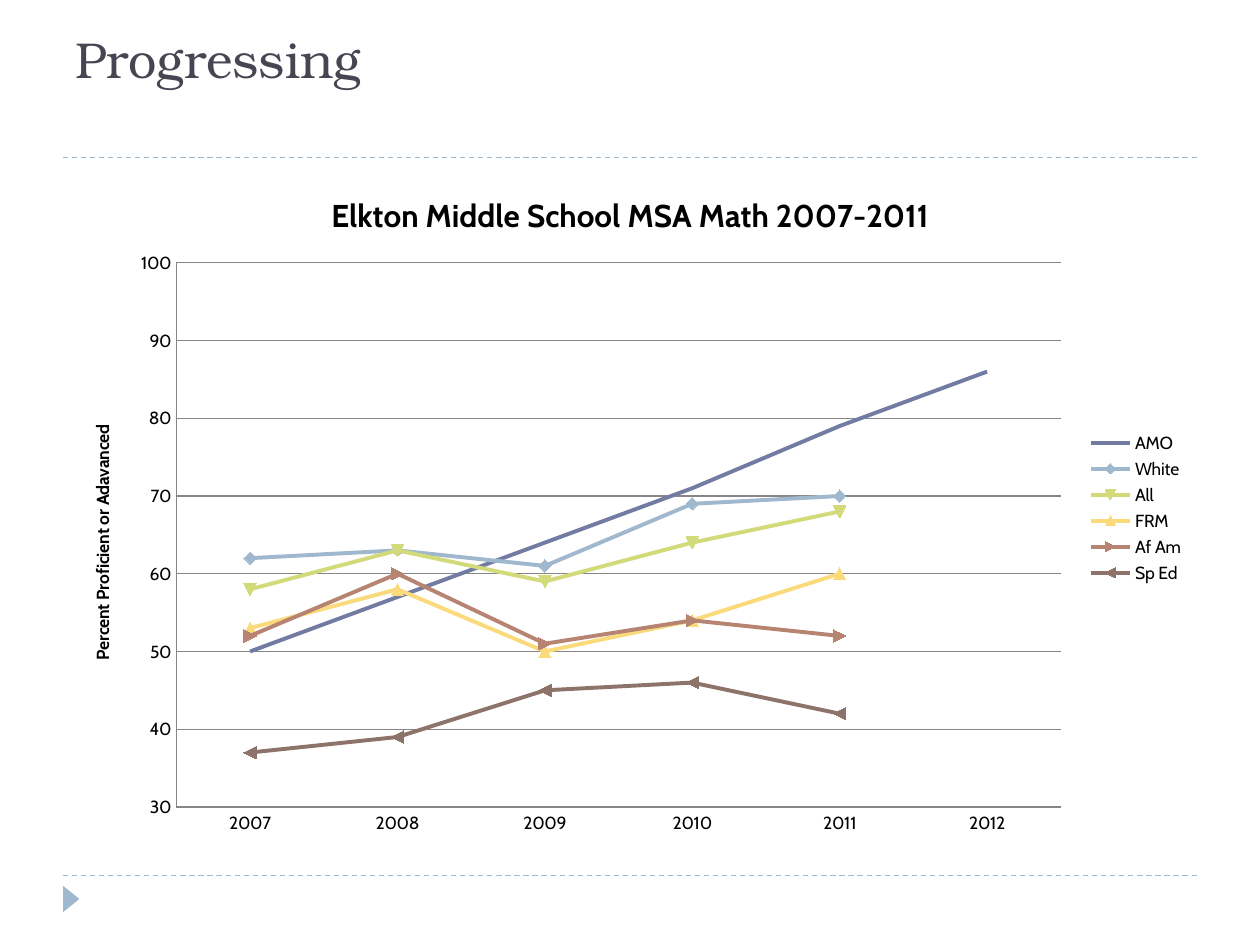
from lxml import etree
from pptx import Presentation, util as u
from pptx.chart import data as chart_data
from pptx.dml.color import RGBColor
from pptx.enum import chart as ch, dml, shapes, text
from pptx.oxml import parse_xml
from pptx.oxml.ns import nsdecls, qn

INK = RGBColor(0x46, 0x46, 0x53)
BLACK = RGBColor(0, 0, 0)
WHITE = RGBColor(0xFF, 0xFF, 0xFF)
GRID = RGBColor(0x86, 0x86, 0x86)
MIST = RGBColor(0x9F, 0xB8, 0xCD)

TITLE = "Progressing"
CHART_TITLE = "Elkton Middle School MSA Math 2007-2011"
AXIS_TITLE = "Percent Proficient or Adavanced"
YEARS = ["2007", "2008", "2009", "2010", "2011", "2012"]
SERIES = [
    ("AMO", RGBColor(0x72, 0x7C, 0xA3), [50, 57, 64, 71, 79, 86]),
    ("White", MIST, [62, 63, 61, 69, 70, None]),
    ("All", RGBColor(0xD2, 0xDA, 0x7A), [58, 63, 59, 64, 68, None]),
    ("FRM", RGBColor(0xFA, 0xDA, 0x7A), [53, 58, 50, 54, 60, None]),
    ("Af Am", RGBColor(0xB8, 0x84, 0x72), [52, 60, 51, 54, 52, None]),
    ("Sp Ed", RGBColor(0x8E, 0x73, 0x6A), [37, 39, 45, 46, 42, None]),
]
RULES = [1.25, 6.95]
PLOT = {"x": 0.1, "y": 0.14, "w": 0.78, "h": 0.8}


def inches(*values):
    return [u.Inches(value) for value in values]


def apply(target, **values):
    for name, value in values.items():
        setattr(target, name, value)


def add_rule(page, top):
    rule = page.shapes.add_connector(
        shapes.MSO_CONNECTOR.STRAIGHT, *inches(0.5, top, 9.5, top))
    apply(rule.line, width=u.Pt(0.75), dash_style=dml.MSO_LINE.DASH)
    rule.line.color.rgb = MIST
    etree.SubElement(rule._element.spPr, qn("a:effectLst"))


def add_title(page):
    box = page.shapes.title
    box.left, box.top, box.width, box.height = inches(0.5, 0.17, 9, 1.08)
    frame = box.text_frame
    apply(frame, text=TITLE, vertical_anchor=text.MSO_ANCHOR.TOP, word_wrap=True)
    para = frame.paragraphs[0]
    para.alignment = text.PP_ALIGN.LEFT
    apply(para.runs[0].font, name="TeX Gyre Bonum", size=u.Pt(28.8))
    para.runs[0].font.color.rgb = INK


def set_heading(owner, words, size):
    frame = owner.text_frame
    frame.text = words
    font = frame.paragraphs[0].runs[0].font
    apply(font, name="Cabin", size=u.Pt(size), bold=True)
    font.color.rgb = BLACK


def place_plot(chart):
    sides = "".join(f'<c:{side} val="{value}"/>' for side, value in PLOT.items())
    layout = parse_xml(
        f'<c:layout {nsdecls("c")}><c:manualLayout><c:layoutTarget val="inner"/>'
        f'<c:xMode val="edge"/><c:yMode val="edge"/>{sides}'
        '</c:manualLayout></c:layout>')
    area = chart._chartSpace.chart.plotArea
    for old in area.findall(qn("c:layout")):
        area.remove(old)
    area.insert(0, layout)


def add_line_chart(page):
    data = chart_data.CategoryChartData()
    data.categories = YEARS
    for name, _, values in SERIES:
        data.add_series(name, values)
    chart = page.shapes.add_chart(
        ch.XL_CHART_TYPE.LINE_MARKERS, *inches(0.5, 1.33, 9, 5.4), data).chart
    apply(chart.font, name="Cabin", size=u.Pt(10))
    chart.font.color.rgb = BLACK
    set_heading(chart.chart_title, CHART_TITLE, 18)
    chart.has_legend = True
    apply(chart.legend, position=ch.XL_LEGEND_POSITION.RIGHT, include_in_layout=False)

    scale = chart.value_axis
    apply(scale, minimum_scale=30, maximum_scale=100, major_unit=10,
          has_major_gridlines=True)
    set_heading(scale.axis_title, AXIS_TITLE, 10)
    for axis in (scale, chart.category_axis):
        apply(axis, major_tick_mark=ch.XL_TICK_MARK.NONE,
              minor_tick_mark=ch.XL_TICK_MARK.NONE)
    for item in (scale, chart.category_axis, scale.major_gridlines):
        item.format.line.color.rgb = GRID
        item.format.line.width = u.Pt(0.75)

    plot = chart.plots[0]
    plot.vary_by_categories = False
    for series, (_, color, _) in zip(plot.series, SERIES):
        series.smooth = False
        series.format.line.color.rgb = color
        series.format.line.width = u.Pt(2.25)
        series.marker.size = 7
        series.marker.format.fill.solid()
        series.marker.format.fill.fore_color.rgb = color
        series.marker.format.line.color.rgb = color
    plot.series[0].marker.style = ch.XL_MARKER_STYLE.NONE
    place_plot(chart)


def add_corner_arrow(page):
    arrow = page.shapes.add_shape(
        shapes.MSO_SHAPE.ISOSCELES_TRIANGLE, *inches(0.46, 7.07, 0.21, 0.13))
    arrow.rotation = 90
    arrow.shadow.inherit = False
    arrow.fill.solid()
    arrow.fill.fore_color.rgb = MIST
    arrow.line.fill.background()


def main():
    deck = Presentation()
    deck.slide_width, deck.slide_height = inches(10, 7.5)
    page = deck.slides.add_slide(deck.slide_layouts[5])
    page.background.fill.solid()
    page.background.fill.fore_color.rgb = WHITE
    for top in RULES:
        add_rule(page, top)
    add_corner_arrow(page)
    add_title(page)
    add_line_chart(page)
    deck.save("out.pptx")


if __name__ == "__main__":
    main()
